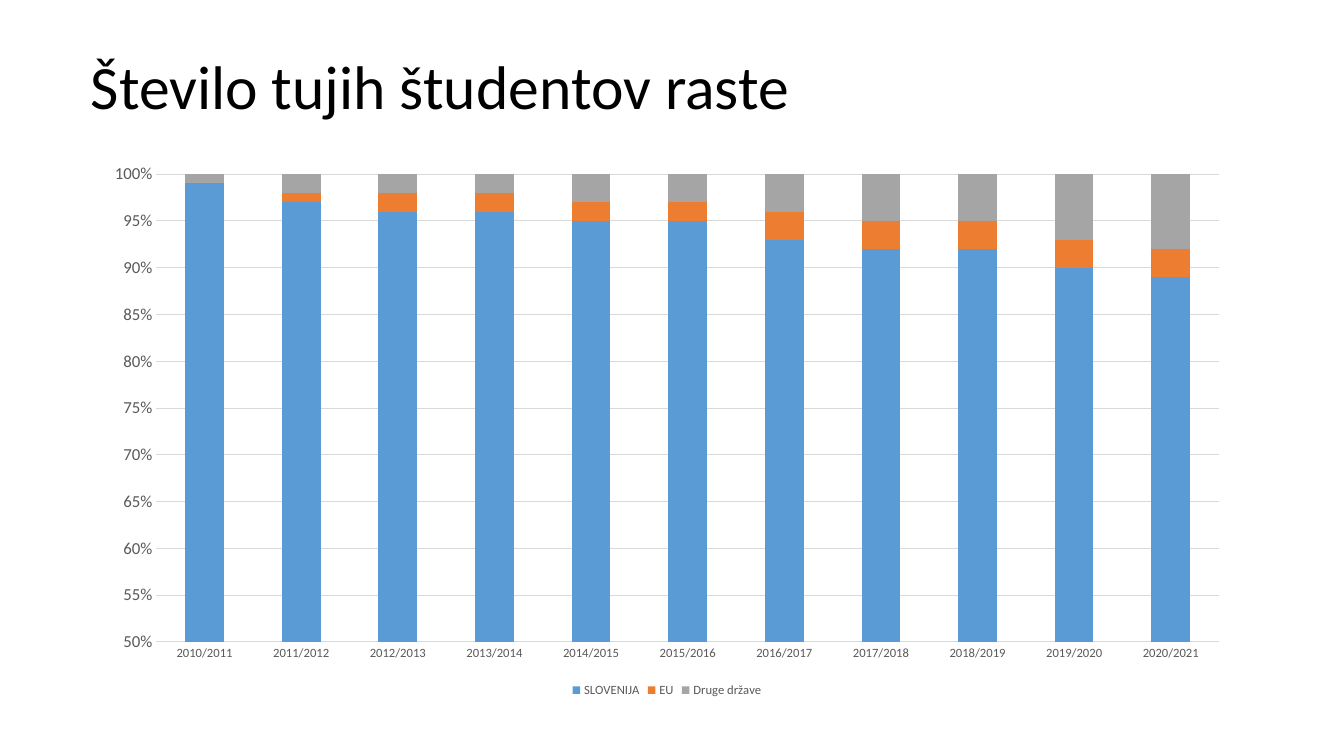
from pptx import Presentation
from pptx.chart.data import CategoryChartData
from pptx.dml.color import RGBColor
from pptx.enum.chart import XL_CHART_TYPE, XL_LEGEND_POSITION, XL_TICK_MARK
from pptx.enum.text import MSO_ANCHOR, MSO_AUTO_SIZE, PP_ALIGN
from pptx.util import Inches, Pt

FONT = "Calibri"
COLORS = {"text": "000000", "label": "595959", "grid": "D9D9D9",
          "SLOVENIJA": "5B9BD5", "EU": "ED7D31", "Druge države": "A5A5A5"}
YEARS = [f"{year}/{year + 1}" for year in range(2010, 2021)]
SHARES = {
    "SLOVENIJA": [99, 97, 96, 96, 95, 94, 93, 92, 92, 90, 89],
    "EU": [0, 1, 2, 2, 2, 2, 3, 3, 3, 3, 3],
    "Druge države": [1, 2, 2, 2, 3, 3, 4, 5, 5, 7, 8],
}


def color(name):
    """Return the named colour."""
    return RGBColor.from_string(COLORS[name])


def set_font(font, size, name):
    """Set face, size and colour of a font."""
    font.name = FONT
    font.size = Pt(size)
    font.color.rgb = color(name)


def set_line(line):
    """Draw a thin grey line."""
    line.color.rgb = color("grid")
    line.width = Pt(0.75)


def add_title(slide, text):
    """Place and format the slide title."""
    title = slide.shapes.title
    title.left, title.top = Inches(0.8), Inches(0.51)
    title.width, title.height = Inches(11.52), Inches(0.77)
    frame = title.text_frame
    frame.text = text
    frame.word_wrap = True
    frame.auto_size = MSO_AUTO_SIZE.SHAPE_TO_FIT_TEXT
    frame.vertical_anchor = MSO_ANCHOR.TOP
    para = frame.paragraphs[0]
    para.alignment = PP_ALIGN.LEFT
    para.line_spacing = 0.9
    set_font(para.font, 44, "text")


def style_axes(chart):
    """Format the year axis and the percent axis."""
    years, shares = chart.category_axis, chart.value_axis
    for axis, size in ((years, 9), (shares, 12)):
        axis.major_tick_mark = axis.minor_tick_mark = XL_TICK_MARK.NONE
        set_font(axis.tick_labels.font, size, "label")
    set_line(years.format.line)
    shares.format.line.fill.background()
    shares.minimum_scale, shares.maximum_scale = 0.5, 1
    shares.major_unit = 0.05
    shares.tick_labels.number_format = "0%"
    shares.tick_labels.number_format_is_linked = False
    set_line(shares.major_gridlines.format.line)


def add_chart(slide):
    """Add the stacked chart of student shares."""
    data = CategoryChartData(number_format="#,##0")
    data.categories = YEARS
    for name, values in SHARES.items():
        data.add_series(name, values)
    chart = slide.shapes.add_chart(
        XL_CHART_TYPE.COLUMN_STACKED_100, Inches(0.91), Inches(1.52),
        Inches(11.41), Inches(5.44), data).chart
    set_font(chart.font, 10, "text")
    chart.has_title = False
    chart.has_legend = True
    chart.legend.position = XL_LEGEND_POSITION.BOTTOM
    chart.legend.include_in_layout = False
    set_font(chart.legend.font, 9, "label")
    plot = chart.plots[0]
    plot.gap_width, plot.overlap = 150, 100
    plot.vary_by_categories = False
    for series in plot.series:
        series.format.fill.solid()
        series.format.fill.fore_color.rgb = color(series.name)
    style_axes(chart)


def main():
    """Build and save the slide."""
    deck = Presentation()
    deck.slide_width, deck.slide_height = Inches(13.33), Inches(7.5)
    slide = deck.slides.add_slide(deck.slide_layouts[5])
    add_title(slide, "Število tujih študentov raste")
    add_chart(slide)
    deck.save("out.pptx")


if __name__ == "__main__":
    main()
